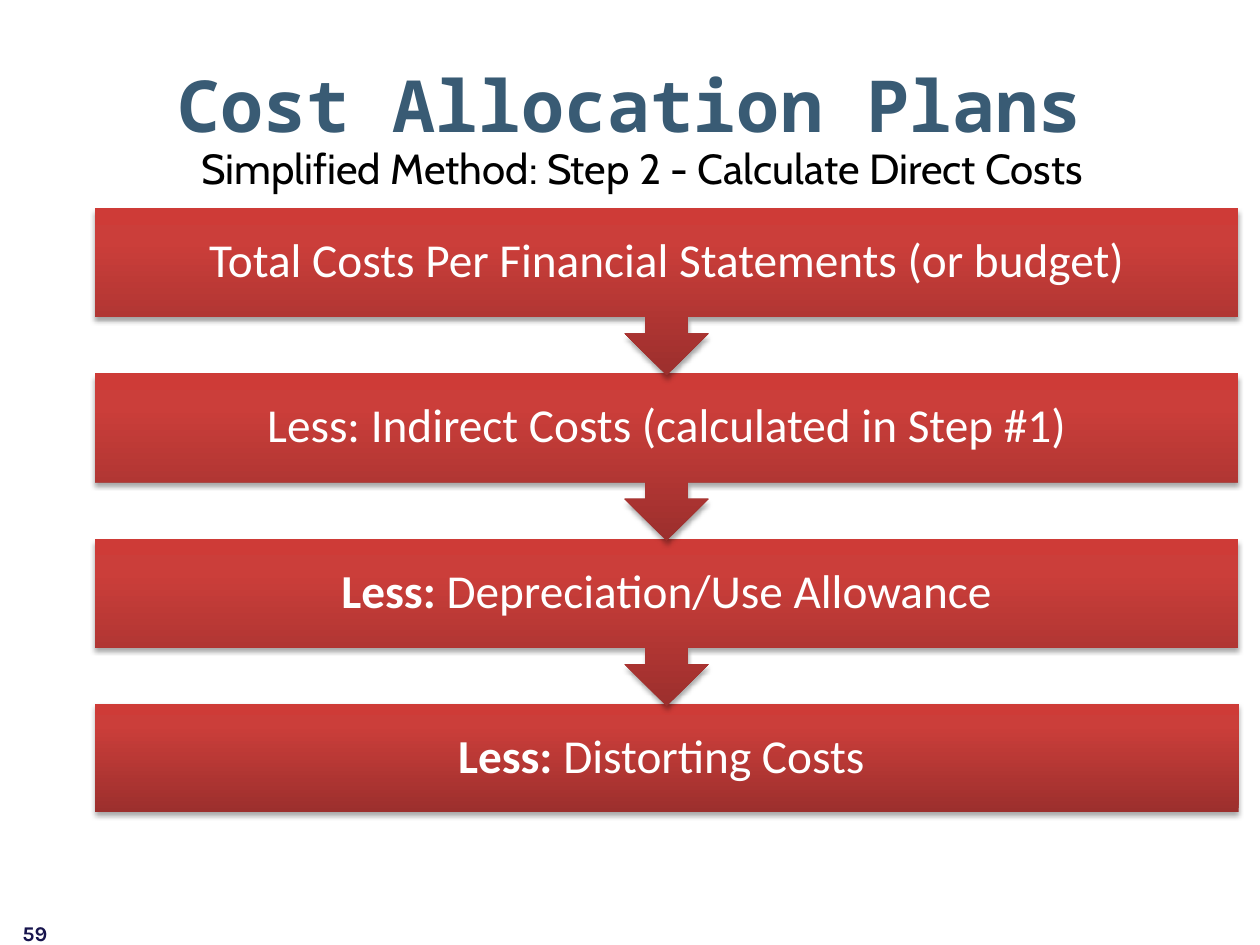
"""Build a slide that steps from total costs down to direct costs."""
from lxml.etree import fromstring
from pptx import Presentation
from pptx.dml.color import RGBColor as Rgb
from pptx.enum.shapes import MSO_SHAPE as Shape
from pptx.enum.text import MSO_ANCHOR as Anchor, PP_ALIGN as Align
from pptx.oxml.ns import nsdecls
from pptx.util import Inches, Pt

CELL = 0.25
COLORS = {"dark": "9C2F2D", "mid": "CB3E3A", "red": "CE3B37", "shade": "000000",
          "white": "FFFFFF", "title": "395B74", "black": "000000", "page": "17144D"}
STEPS = [
    ("", "Total Costs Per Financial Statements (or budget)"),
    ("", "Less: Indirect Costs (calculated in Step #1)"),
    ("Less: ", "Depreciation/Use Allowance"),
    ("Less: ", "Distorting Costs "),
]


def write(frame, text, lead="", font="Calibri", size=27, color="white",
          bold=False, align=Align.LEFT, space=1.0):
    para = frame.paragraphs[0]
    para.alignment = align
    para.line_spacing = space
    for part, heavy in ((lead, True), (text, bold)):
        if part:
            run = para.add_run()
            run.text = part
            run.font.name = font
            run.font.size = Pt(size)
            run.font.bold = heavy
            run.font.color.rgb = Rgb.from_string(COLORS[color])


class Deck:
    def __init__(self):
        self.prs = Presentation()
        self.prs.slide_width = Inches(10)
        self.prs.slide_height = Inches(7.5)
        self.slide = self.prs.slides.add_slide(self.prs.slide_layouts[6])

    def grid(self, *cells):
        return [Inches(n * CELL) for n in cells]

    def text(self, area, text, pad=(0.1, 0.05), anchor=Anchor.TOP, **style):
        frame = self.slide.shapes.add_textbox(*self.grid(*area)).text_frame
        frame.word_wrap = True
        frame.vertical_anchor = anchor
        frame.margin_left = frame.margin_right = Inches(pad[0])
        frame.margin_top = frame.margin_bottom = Inches(pad[1])
        write(frame, text, **style)

    def block(self, kind, area, turn=0):
        shape = self.slide.shapes.add_shape(kind, *self.grid(*area))
        shape.rotation = turn
        shape.line.fill.background()
        shape.shadow.inherit = False
        props = shape.element.spPr
        stops = "".join(
            f'<a:gs pos="{pos}"><a:srgbClr val="{COLORS[name]}"/></a:gs>'
            for pos, name in ((0, "dark"), (80000, "mid"), (100000, "red")))
        fill = fromstring(
            f'<a:gradFill {nsdecls("a")} rotWithShape="0"><a:gsLst>{stops}</a:gsLst>'
            '<a:lin ang="16200000" scaled="0"/></a:gradFill>')
        props.insert(props.index(props.prstGeom) + 1, fill)
        effects = props[-1]
        effects.append(fromstring(
            f'<a:outerShdw {nsdecls("a")} blurRad="{Pt(3.1)}" dist="{Pt(1.8)}" '
            f'dir="5400000" rotWithShape="0"><a:srgbClr val="{COLORS["shade"]}">'
            '<a:alpha val="35000"/></a:srgbClr></a:outerShdw>'))

    def step(self, row, lead, text, last):
        left, wide, high = 3, 36.32, 3.44
        if last:
            self.block(Shape.RECTANGLE, (left, row, wide, high))
        else:
            self.block(Shape.UP_ARROW_CALLOUT, (left, row, wide, 5.32), 180)
        self.text((left, row, wide, high), text, lead=lead, pad=(0.21, 0.21),
                  anchor=Anchor.MIDDLE, align=Align.CENTER, space=0.9)


def main():
    deck = Deck()
    for i, (lead, text) in reversed(list(enumerate(STEPS))):
        deck.step(6.6 + i * 5.25, lead, text, i == len(STEPS) - 1)
    deck.text((6, 4.32, 32.32, 2), "Simplified Method: Step 2 - Calculate Direct Costs",
              font="Cabin", size=24, color="black")
    deck.text((2, 1.92, 36, 4.28), "Cost Allocation Plans", pad=(0.1, 0),
              font="Noto Sans Mono", size=41, color="title", bold=True,
              align=Align.CENTER)
    deck.text((0.32, 29.04, 9.32, 0.96), "59", font="Karla", size=12,
              color="page", bold=True)
    deck.prs.save("out.pptx")


if __name__ == "__main__":
    main()
